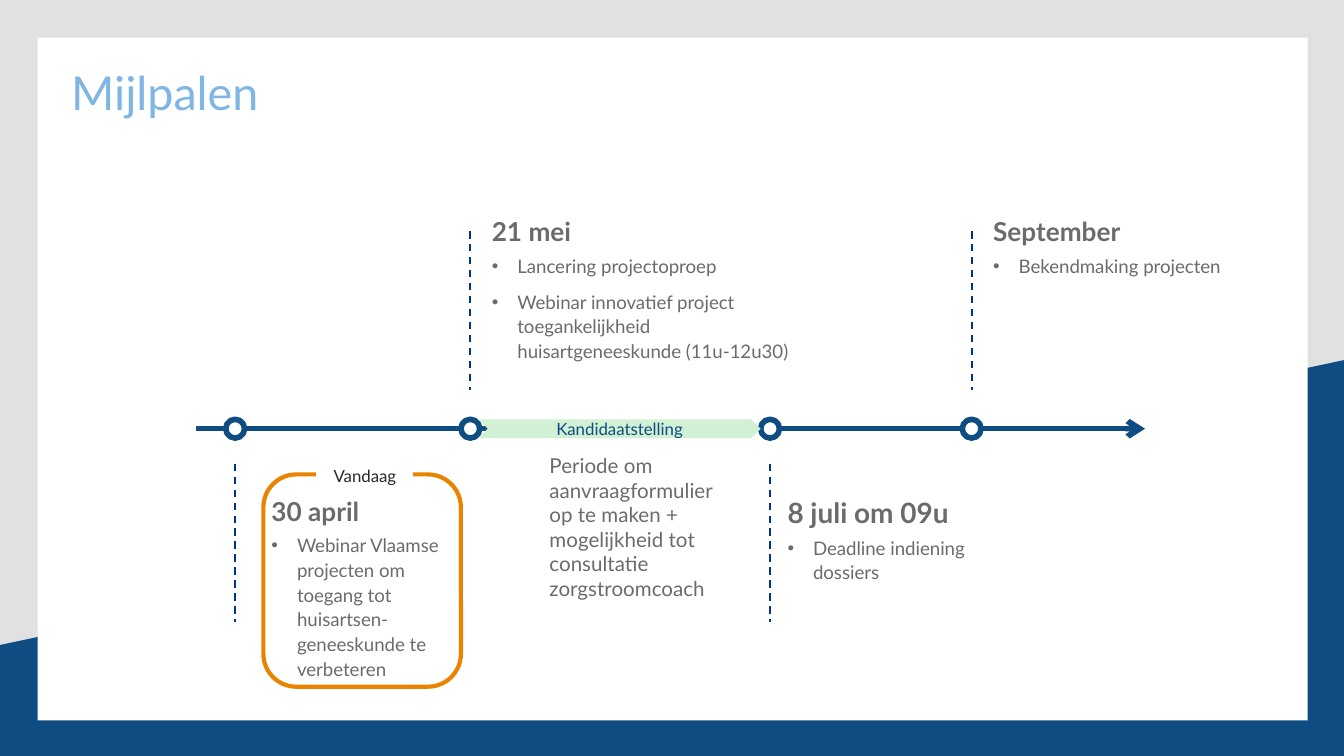
"""Build the milestones timeline slide."""
from dataclasses import dataclass

from lxml import etree
from pptx import Presentation
from pptx.dml.color import RGBColor
from pptx.enum.dml import MSO_LINE
from pptx.enum.shapes import MSO_CONNECTOR, MSO_SHAPE
from pptx.enum.text import MSO_ANCHOR, PP_ALIGN
from pptx.oxml.ns import qn
from pptx.util import Inches, Pt

RECT = MSO_SHAPE.RECTANGLE
ROUND = MSO_SHAPE.ROUNDED_RECTANGLE
OVAL = MSO_SHAPE.OVAL
CHEVRON = MSO_SHAPE.CHEVRON
STRAIGHT = MSO_CONNECTOR.STRAIGHT
DASH = MSO_LINE.DASH
MIDDLE, TOP = MSO_ANCHOR.MIDDLE, MSO_ANCHOR.TOP
CENTER, LEFT = PP_ALIGN.CENTER, PP_ALIGN.LEFT

FONT = "Lato"
NAVY, GREY, WHITE = "0F4C81", "6B6B6B", "FFFFFF"
WIDTH = Inches(10)
HEIGHT = WIDTH * 9 // 16
AXIS, DOT, INDENT = 3.19, 0.14, 0.19


@dataclass
class Stone:
    """A milestone on the axis with its text box."""
    x: float
    box: tuple
    head: str
    items: tuple
    size: int = 14

    @property
    def above(self) -> bool:
        """Tell whether the text stands above the axis."""
        return self.box[1] < AXIS


STONES = (
    Stone(1.75, (2.02, 3.66, 1.41, 1.4), "30 april",
          ("Webinar Vlaamse projecten om toegang tot huisartsen-geneeskunde te verbeteren",)),
    Stone(3.5, (3.66, 1.58, 2.24, 1.13), "21 mei",
          ("Lancering projectoproep",
           "Webinar innovatief project toegankelijkheid huisartgeneeskunde (11u-12u30)")),
    Stone(5.73, (5.86, 3.66, 1.47, 0.68), "8 juli om 09u",
          ("Deadline indiening dossiers",), 15),
    Stone(7.23, (7.39, 1.58, 2.24, 0.47), "September", ("Bekendmaking projecten",)),
)


def color(code: str) -> RGBColor:
    """Turn a hex string into a colour."""
    return RGBColor.from_string(code)


def style(para, size: float, code: str, bold: bool = False) -> None:
    """Set the font of a paragraph."""
    font = para.font
    font.name, font.size, font.bold = FONT, Pt(size), bold
    font.color.rgb = color(code)


def paint(shape, fill: str = "", line: str = "", width: float = 1) -> None:
    """Set fill and outline of a shape."""
    shape.shadow.inherit = False
    if fill:
        shape.fill.solid()
        shape.fill.fore_color.rgb = color(fill)
    else:
        shape.fill.background()
    if line:
        shape.line.color.rgb = color(line)
        shape.line.width = Pt(width)
    else:
        shape.line.fill.background()


def add_form(slide, kind, box: tuple, fill: str = "", line: str = "", width: float = 1):
    """Add a preset shape."""
    shape = slide.shapes.add_shape(kind, *map(Inches, box))
    paint(shape, fill, line, width)
    return shape


def clear(frame, wrap: bool = True) -> None:
    """Remove the insets of a text frame and set its wrapping."""
    frame.margin_left = frame.margin_right = frame.margin_top = frame.margin_bottom = 0
    frame.word_wrap = wrap


def add_label(shape, text: str, code: str) -> None:
    """Centre a small label in a shape."""
    frame = shape.text_frame
    clear(frame, False)
    frame.vertical_anchor = MIDDLE
    para = frame.paragraphs[0]
    para.text, para.alignment = text, CENTER
    style(para, 9, code)


def add_line(slide, start: tuple, end: tuple, code: str, width: float):
    """Add a straight line without shadow."""
    line = slide.shapes.add_connector(STRAIGHT, *map(Inches, start + end))
    line.line.color.rgb = color(code)
    line.line.width = Pt(width)
    etree.SubElement(line._element.spPr, qn("a:effectLst"))
    return line


def add_axis(slide) -> None:
    """Draw the time axis with square ends and an arrowhead."""
    axis = add_line(slide, (1.48, AXIS), (8.52, AXIS), NAVY, 3)
    outline = axis.line._get_or_add_ln()
    outline.set("cap", "sq")
    etree.SubElement(outline, qn("a:tailEnd")).set("type", "arrow")


def add_bullet(para) -> None:
    """Give a paragraph a hanging bullet."""
    props = para._p.get_or_add_pPr()
    props.set("marL", str(Inches(INDENT)))
    props.set("indent", str(-Inches(INDENT)))
    etree.SubElement(props, qn("a:buFont")).set("typeface", "Arial")
    etree.SubElement(props, qn("a:buChar")).set("char", "•")


def add_stone(slide, stone: Stone) -> None:
    """Draw the dot, dashed line and text of a milestone."""
    add_form(slide, OVAL, (stone.x - DOT / 2, AXIS - DOT / 2, DOT, DOT), WHITE, NAVY, 3)
    top = 1.72 if stone.above else 3.45
    stem = add_line(slide, (stone.x, top), (stone.x, top + 1.18), "00338D", 1)
    stem.line.dash_style = DASH
    frame = slide.shapes.add_textbox(*map(Inches, stone.box)).text_frame
    clear(frame)
    for i, text in enumerate((stone.head, *stone.items)):
        para = frame.add_paragraph() if i else frame.paragraphs[0]
        para.text = text
        if i:
            add_bullet(para)
        para.line_spacing = 1.1
        para.space_after = Pt(6 if i else 3)
        style(para, 10 if i else stone.size, GREY, not i)


def add_back(slide) -> None:
    """Draw the background, slanted band and white panel."""
    fill = slide.background.fill
    fill.solid()
    fill.fore_color.rgb = color("E1E1E1")
    path = slide.shapes.build_freeform(WIDTH, Inches(2.68), 1)
    path.add_line_segments([(WIDTH, HEIGHT), (0, HEIGHT), (0, Inches(4.8))])
    paint(path.convert_to_shape(), NAVY)
    add_form(slide, RECT, (0.28, 0.28, 9.45, 5.08), WHITE)


def add_title(slide, text: str) -> None:
    """Place the title in front of the panel."""
    title = slide.shapes.title
    slide.shapes._spTree.append(title._element)
    title.left, title.top, title.width, title.height = map(Inches, (0.53, 0.52, 6.54, 0.7))
    frame = title.text_frame
    clear(frame)
    frame.vertical_anchor = TOP
    para = frame.paragraphs[0]
    para.text, para.alignment, para.line_spacing = text, LEFT, 0.9
    style(para, 25, "80B6E4")


def main() -> None:
    """Build and save the slide."""
    deck = Presentation()
    deck.slide_width, deck.slide_height = WIDTH, HEIGHT
    slide = deck.slides.add_slide(deck.slide_layouts[5])
    add_back(slide)
    add_title(slide, "Mijlpalen")
    add_axis(slide)
    for stone in STONES:
        add_stone(slide, stone)

    add_form(slide, ROUND, (1.96, 3.53, 1.47, 1.58), line="E98300", width=2.25)
    today = add_form(slide, RECT, (2.36, 3.45, 0.71, 0.18), WHITE, WHITE)
    add_label(today, "Vandaag", "292929")
    phase = add_form(slide, CHEVRON, (3.56, 3.12, 2.1, DOT), "D2F0D4")
    add_label(phase, "Kandidaatstelling", NAVY)

    frame = slide.shapes.add_textbox(*map(Inches, (3.99, 3.32, 1.47, 1.21))).text_frame
    frame.word_wrap = True
    para = frame.paragraphs[0]
    para.text = ("Periode om aanvraagformulier op te maken + "
                 "mogelijkheid tot consultatie zorgstroomcoach")
    style(para, 11, GREY)
    deck.save("out.pptx")


if __name__ == "__main__":
    main()
